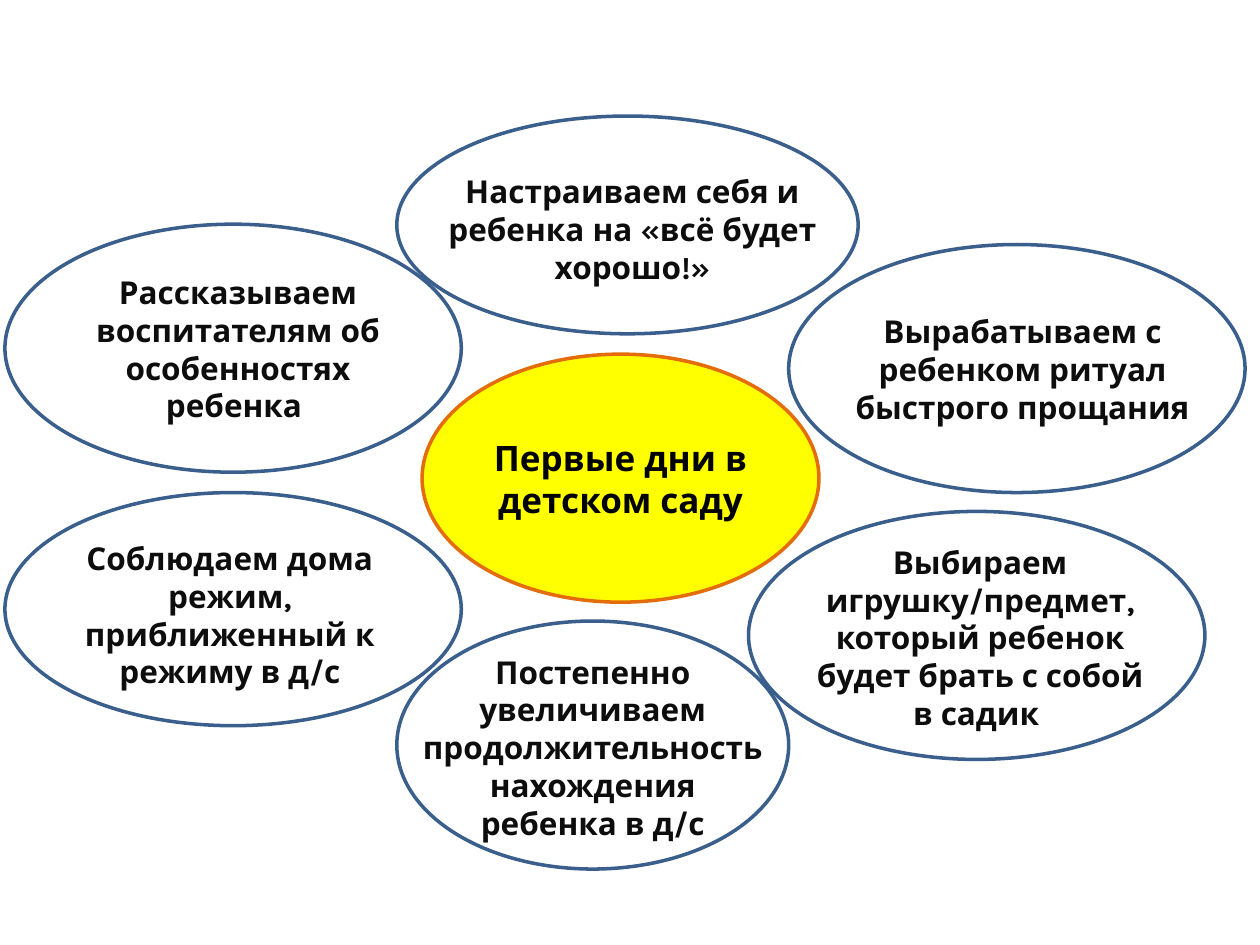
from pptx import Presentation
from pptx.dml.color import RGBColor
from pptx.enum.shapes import MSO_SHAPE
from pptx.enum.text import MSO_ANCHOR, MSO_AUTO_SIZE as AUTO_SIZE, PP_ALIGN
from pptx.util import Cm, Pt

YELLOW = RGBColor(0xFF, 0xFF, 0x00)
ORANGE = RGBColor(0xE4, 0x6C, 0x0A)
BLUE = RGBColor(0x3A, 0x5F, 0x8C)
BLACK = RGBColor(0x00, 0x00, 0x00)
DARK = RGBColor(0x0D, 0x0D, 0x0D)

# Content: text, then left, top, width, height in cm
CENTER = ("Первые дни в детском саду", (8.51, 7.14, 8, 5))

# Petals: text, oval area, text area
PETALS = [
    ("Настраиваем себя и ребенка на «всё будет хорошо!»",
     (8, 2.34, 9.3, 4.39), (8.51, 3.35, 8.48, 2.57)),
    ("Рассказываем воспитателям об особенностях ребенка ",
     (0.1, 4.52, 9.2, 5), (1.6, 5.38, 6.4, 3.33)),
    ("Вырабатываем с ребенком ритуал быстрого прощания",
     (15.9, 4.93, 9.2, 5), (16.31, 6.17, 8.61, 2.57)),
    ("Соблюдаем дома режим, приближенный к режиму в д/с",
     (0.1, 9.93, 9.2, 4.7), (0.94, 10.74, 7.39, 3.33)),
    ("Выбираем игрушку/предмет, который ребенок будет брать с собой в садик ",
     (15.09, 10.31, 9.2, 5), (16, 10.82, 7.52, 4.11)),
    ("Постепенно увеличиваем продолжительность нахождения ребенка в д/с",
     (8, 12.52, 7.9, 5), (8.23, 13.03, 7.44, 4.11)),
]


def add_oval(page, area, line_color, fill_color=None):
    oval = page.shapes.add_shape(MSO_SHAPE.OVAL, *map(Cm, area))
    oval.shadow.inherit = False
    if fill_color is None:
        oval.fill.background()
    else:
        oval.fill.solid()
        oval.fill.fore_color.rgb = fill_color
    oval.line.color.rgb = line_color
    oval.line.width = Pt(2)
    return oval


def write(box, text, size, color, **frame_format):
    frame = box.text_frame
    for name, value in {"word_wrap": True, **frame_format}.items():
        setattr(frame, name, value)
    para = frame.paragraphs[0]
    para.alignment = PP_ALIGN.CENTER
    span = para.add_run()
    span.text = text
    for name, value in {"name": "Karla", "size": Pt(size), "bold": True}.items():
        setattr(span.font, name, value)
    span.font.color.rgb = color


def main():
    deck = Presentation()
    deck.slide_width, deck.slide_height = Cm(25.4), Cm(19.05)
    page = deck.slides.add_slide(deck.slide_layouts[6])

    # Central topic
    text, area = CENTER
    topic = add_oval(page, area, ORANGE, YELLOW)
    write(topic, text, 20, BLACK, vertical_anchor=MSO_ANCHOR.MIDDLE)

    # Surrounding advice
    for text, oval_area, text_area in PETALS:
        add_oval(page, oval_area, BLUE)
        box = page.shapes.add_textbox(*map(Cm, text_area))
        write(box, text, 18, DARK, auto_size=AUTO_SIZE.SHAPE_TO_FIT_TEXT)

    deck.save("out.pptx")


if __name__ == "__main__":
    main()
